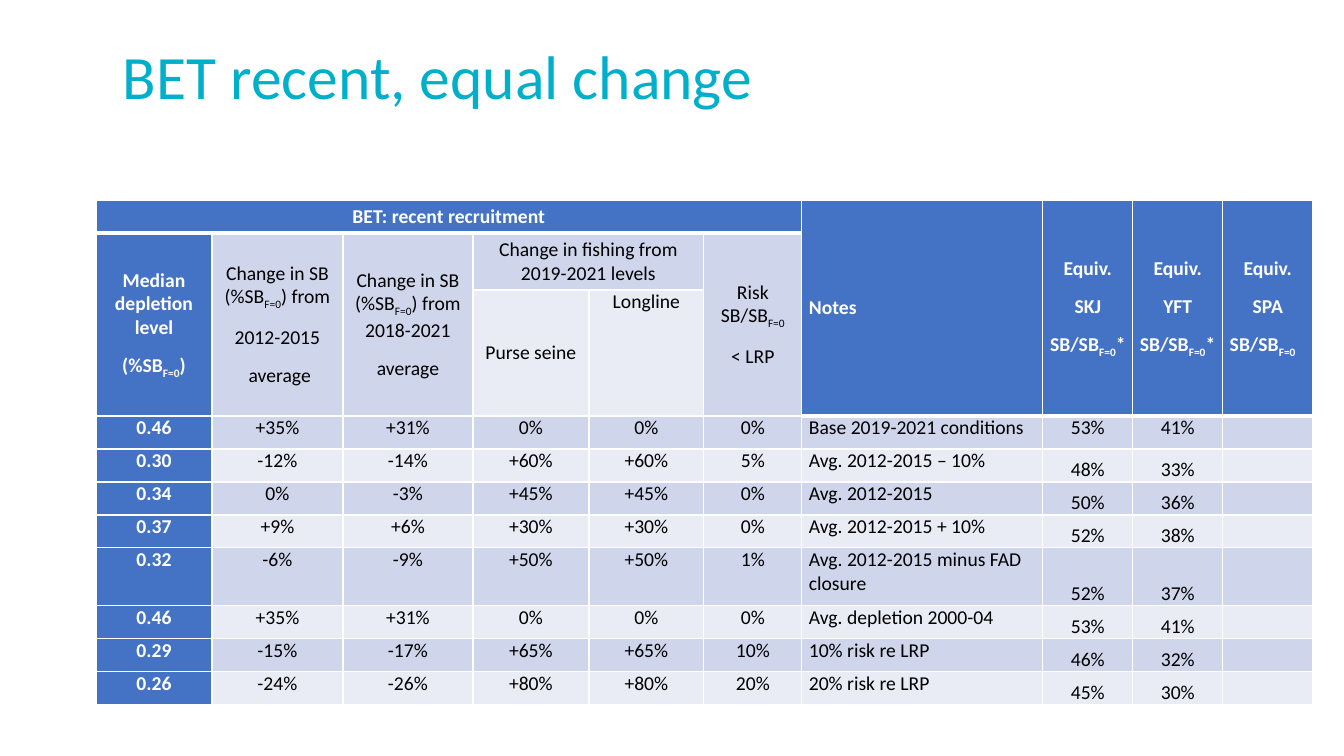
from pptx import Presentation
from pptx.dml.color import RGBColor
from pptx.enum.text import MSO_ANCHOR as ANCHOR, PP_ALIGN as ALIGN
from pptx.oxml import parse_xml
from pptx.oxml.ns import nsdecls
from pptx.util import Pt

WHITE = RGBColor(0xFF, 0xFF, 0xFF)
BLACK = RGBColor(0, 0, 0)
TEAL = RGBColor(0x00, 0xB0, 0xCA)
BLUE = RGBColor(0x44, 0x72, 0xC4)
DARK_BAND = RGBColor(0xCF, 0xD5, 0xEA)
LIGHT_BAND = RGBColor(0xE9, 0xEB, 0xF5)
FONT = "Calibri"

TITLE = "BET recent, equal change"

# (row, column, rows spanned, columns spanned, fill, paragraphs); _x_ is a subscript
HEADERS = [
    (0, 0, 1, 6, BLUE, ["BET: recent recruitment"]),
    (0, 6, 3, 1, BLUE, ["Notes"]),
    (0, 7, 3, 1, BLUE, ["Equiv.", "SKJ", "SB/SB_F=0_*"]),
    (0, 8, 3, 1, BLUE, ["Equiv.", "YFT", "SB/SB_F=0_*"]),
    (0, 9, 3, 1, BLUE, ["Equiv.", "SPA", "SB/SB_F=0_"]),
    (1, 0, 2, 1, BLUE, ["Median depletion level", "(%SB_F=0_)"]),
    (1, 1, 2, 1, DARK_BAND, ["Change in SB (%SB_F=0_) from", "2012-2015", " average"]),
    (1, 2, 2, 1, DARK_BAND, ["Change in SB (%SB_F=0_) from 2018-2021", "average"]),
    (1, 3, 1, 2, DARK_BAND, ["Change in fishing from 2019-2021 levels"]),
    (1, 5, 2, 1, DARK_BAND, ["Risk SB/SB_F=0_", "< LRP"]),
    (2, 3, 1, 1, LIGHT_BAND, ["Purse seine"]),
    (2, 4, 1, 1, LIGHT_BAND, ["Longline"]),
]
LEFT_LAST_LINE = [(0, 6), (0, 8), (0, 9)]
TOP_HEADER = (2, 4)

SCENARIOS = [
    ("0.46", "+35%", "+31%", "0%", "0%", "0%", "Base 2019-2021 conditions", "53%", "41%", ""),
    ("0.30", "-12%", "-14%", "+60%", "+60%", "5%", "Avg. 2012-2015 – 10%", "48%", "33%", ""),
    ("0.34", "0%", "-3%", "+45%", "+45%", "0%", "Avg. 2012-2015", "50%", "36%", ""),
    ("0.37", "+9%", "+6%", "+30%", "+30%", "0%", "Avg. 2012-2015 + 10%", "52%", "38%", ""),
    ("0.32", "-6%", "-9%", "+50%", "+50%", "1%", "Avg. 2012-2015 minus FAD closure",
     "52%", "37%", ""),
    ("0.46", "+35%", "+31%", "0%", "0%", "0%", "Avg. depletion 2000-04", "53%", "41%", ""),
    ("0.29", "-15%", "-17%", "+65%", "+65%", "10%", "10% risk re LRP", "46%", "32%", ""),
    ("0.26", "-24%", "-26%", "+80%", "+80%", "20%", "20% risk re LRP", "45%", "30%", ""),
]
HEADER_ROWS = 3
NOTES_COL = 6

COL_WIDTHS = [116, 131, 130, 116, 115, 98, 241, 90, 90, 90]
ROW_HEIGHTS = [33, 57, 126, 33, 33, 33, 33, 58, 33, 33, 33]
TABLE_LEFT, TABLE_TOP = 96, 200


def px(n):
    return round(n * 914400 / 100.8)


def style_run(r, size, color, bold=False):
    r.font.name, r.font.size, r.font.bold = FONT, Pt(size), bold
    r.font.color.rgb = color


def add_borders(cell, bottom):
    tc_pr = cell._tc.get_or_add_tcPr()
    for i, (side, width) in enumerate([("L", 1), ("R", 1), ("T", 1), ("B", bottom)]):
        tc_pr.insert(i, parse_xml(
            f'<a:ln{side} {nsdecls("a")} w="{Pt(width)}"><a:solidFill>'
            f'<a:srgbClr val="{WHITE}"/></a:solidFill></a:ln{side}>'))


def fill_cell(cell, lines, fill, anchor):
    cell.fill.solid()
    cell.fill.fore_color.rgb = fill
    cell.vertical_anchor = anchor
    tf = cell.text_frame
    tf.text = "\n".join(lines)
    for p, line in zip(tf.paragraphs, lines):
        p.text = ""
        p.alignment = ALIGN.CENTER
        p.space_after = Pt(10)
        for i, part in enumerate(line.split("_")):
            if not part:
                continue
            r = p.add_run()
            r.text = part
            style_run(r, 14, WHITE if fill == BLUE else BLACK, fill == BLUE)
            if i % 2:
                r._r.get_or_add_rPr().set("baseline", "-25000")


def add_title(slide):
    tf = slide.shapes.add_textbox(px(113), px(41), px(1159), px(111)).text_frame
    tf.word_wrap = True
    tf.text = TITLE
    p = tf.paragraphs[0]
    p.line_spacing = 0.9
    style_run(p.runs[0], 44, TEAL)


def add_scenario_table(slide):
    table = slide.shapes.add_table(
        len(ROW_HEIGHTS), len(COL_WIDTHS), px(TABLE_LEFT), px(TABLE_TOP),
        px(sum(COL_WIDTHS)), px(sum(ROW_HEIGHTS))).table
    for col, width in zip(table.columns, COL_WIDTHS):
        col.width = px(width)
    for i, (row, height) in enumerate(zip(table.rows, ROW_HEIGHTS)):
        row.height = px(height)
        for cell in row.cells:
            cell.margin_left = cell.margin_right = px(7)
            cell.margin_top = cell.margin_bottom = 0
            add_borders(cell, 3 if i == 0 else 1)

    for row, col, down, across, fill, lines in HEADERS:
        cell = table.cell(row, col)
        if down * across > 1:
            cell.merge(table.cell(row + down - 1, col + across - 1))
        anchor = ANCHOR.TOP if (row, col) == TOP_HEADER else ANCHOR.MIDDLE
        fill_cell(cell, lines, fill, anchor)
        if (row, col) in LEFT_LAST_LINE:
            cell.text_frame.paragraphs[-1].alignment = ALIGN.LEFT

    for i, scenario in enumerate(SCENARIOS):
        band = LIGHT_BAND if i % 2 else DARK_BAND
        for col, text in enumerate(scenario):
            cell = table.cell(HEADER_ROWS + i, col)
            low = i > 0 and col > NOTES_COL
            fill_cell(cell, [text], band if col else BLUE,
                      ANCHOR.BOTTOM if low else ANCHOR.TOP)
            if col == NOTES_COL:
                cell.text_frame.paragraphs[0].alignment = ALIGN.LEFT


def main():
    prs = Presentation()
    prs.slide_width, prs.slide_height = px(1344), px(756)
    slide = prs.slides.add_slide(prs.slide_layouts[6])
    add_title(slide)
    add_scenario_table(slide)
    prs.save("out.pptx")


if __name__ == "__main__":
    main()
